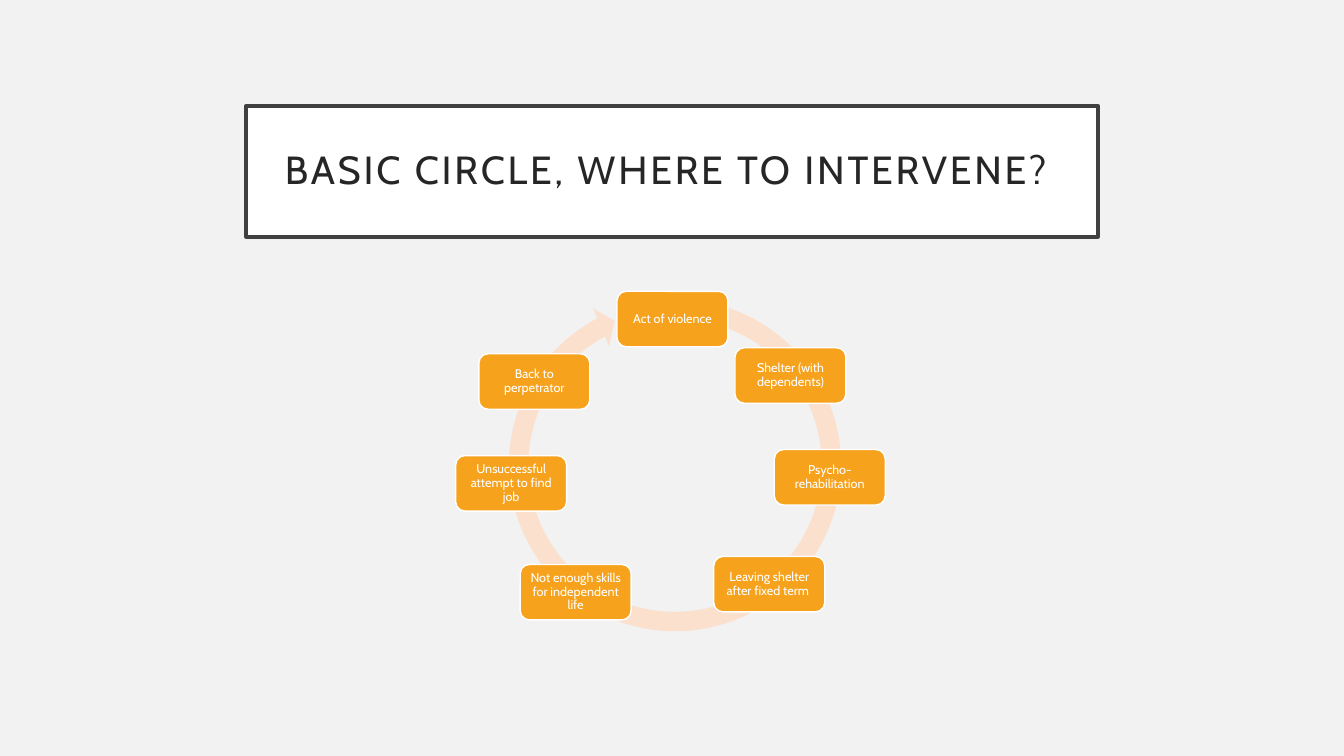
from pptx import Presentation
from pptx.dml.color import RGBColor
from pptx.enum.shapes import MSO_SHAPE as SHAPE
from pptx.enum.text import MSO_ANCHOR as ANCHOR, MSO_AUTO_SIZE as AUTO, PP_ALIGN as ALIGN
from pptx.util import Inches, Pt

BACKGROUND = RGBColor(0xF2, 0xF2, 0xF2)
WHITE = RGBColor(0xFF, 0xFF, 0xFF)
FRAME = RGBColor(0x40, 0x40, 0x40)
TITLE_TEXT = RGBColor(0x26, 0x26, 0x26)
ORANGE = RGBColor(0xF6, 0xA2, 0x1D)
PEACH = RGBColor(0xFB, 0xE0, 0xCD)


def put_text(sp, text, size, color, inset, spacing=0):
    tf = sp.text_frame
    tf.word_wrap = True
    tf.auto_size = AUTO.NONE
    tf.vertical_anchor = ANCHOR.MIDDLE
    tf.margin_left = tf.margin_right = Inches(inset)
    tf.margin_top = tf.margin_bottom = Inches(inset)
    p = tf.paragraphs[0]
    p.alignment = ALIGN.CENTER
    p.line_spacing = 0.9
    r = p.add_run()
    r.text = text
    r.font.name = "Cabin"
    r.font.size = Pt(size)
    r.font.color.rgb = color
    if spacing:
        r._r.get_or_add_rPr().set("spc", str(spacing * 100))


def paint(sp, fill, line=None, width=1):
    sp.fill.solid()
    sp.fill.fore_color.rgb = fill
    if line is None:
        sp.line.fill.background()
    else:
        sp.line.color.rgb = line
        sp.line.width = Pt(width)


prs = Presentation()
prs.slide_width = Inches(13.33)
prs.slide_height = Inches(7.5)
s = prs.slides.add_slide(prs.slide_layouts[5])
s.background.fill.solid()
s.background.fill.fore_color.rgb = BACKGROUND

# Framed title
title = s.shapes.title
title.left, title.top = Inches(2.44), Inches(1.05)
title.width, title.height = Inches(8.45), Inches(1.3)
paint(title, WHITE, FRAME, 2.5)
put_text(title, "BASIC CIRCLE, WHERE TO INTERVENE? ", 28, TITLE_TEXT, 0.2, spacing=2)

# Circular arrow behind the steps
ring = s.shapes.add_shape(SHAPE.CIRCULAR_ARROW, Inches(4.94), Inches(2.86),
                          Inches(3.51), Inches(3.51))
ring.shadow.inherit = False
paint(ring, PEACH)
for i, value in enumerate([0.055, 3.307, 145.075, 169.55, 0.058]):
    ring.adjustments[i] = value

# Steps of the cycle, clockwise from the top
steps = [
    (6.12, 2.89, "Act of violence"),
    (7.29, 3.45, "Shelter (with dependents)"),
    (7.68, 4.46, "Psycho-rehabilitation"),
    (7.08, 5.52, "Leaving shelter after fixed term "),
    (5.16, 5.6, "Not enough skills for independent life"),
    (4.52, 4.52, "Unsuccessful attempt to find job"),
    (4.75, 3.51, "Back to perpetrator"),
]
for left, top, label in steps:
    box = s.shapes.add_shape(SHAPE.ROUNDED_RECTANGLE, Inches(left), Inches(top),
                             Inches(1.1), Inches(0.55))
    box.shadow.inherit = False
    paint(box, ORANGE, WHITE)
    put_text(box, label, 9, WHITE, 0.04)

prs.save("out.pptx")
